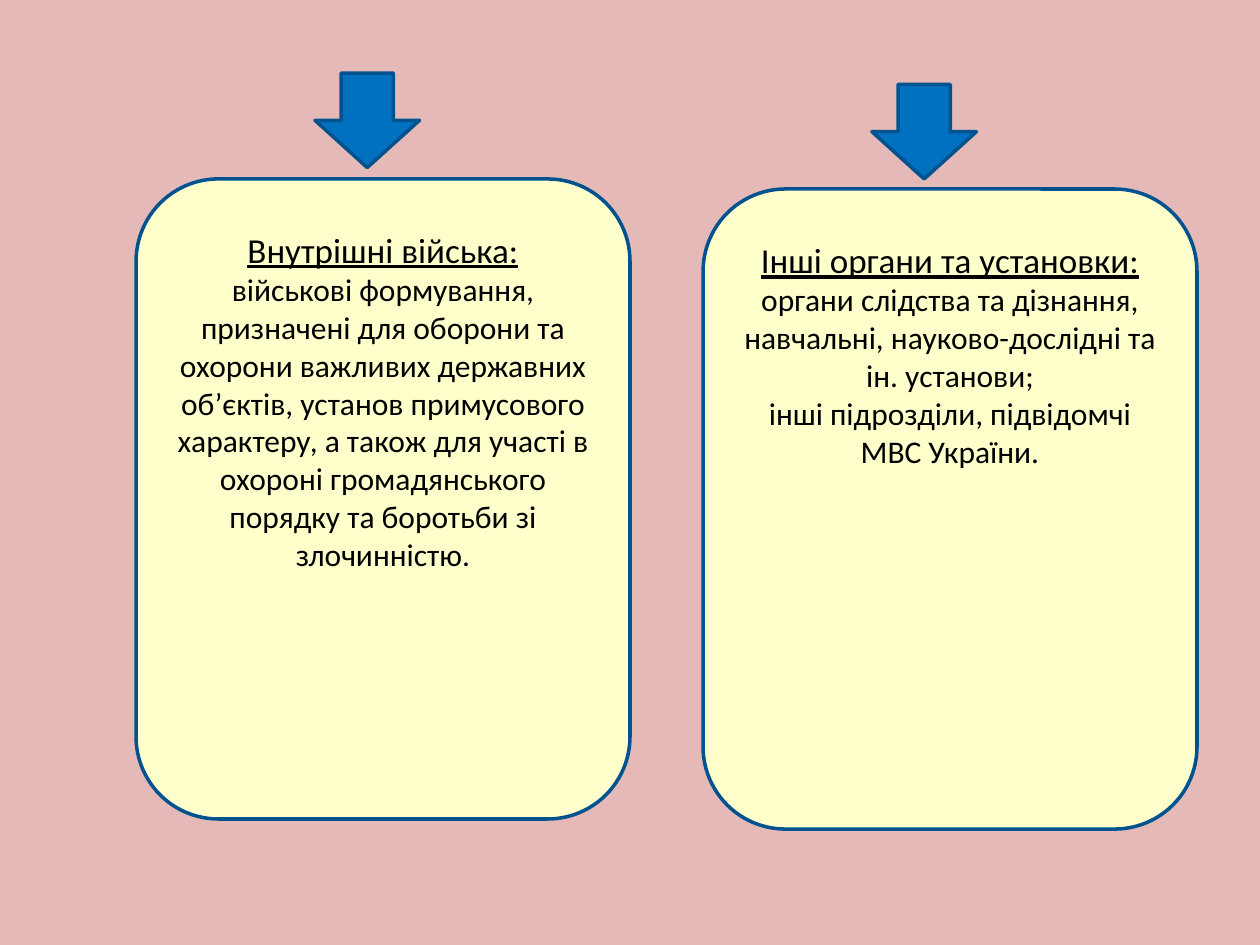
import pptx
import pptx.dml.color
import pptx.enum.shapes
import pptx.enum.text
import pptx.util
from pptx.util import Inches

SHAPES = pptx.enum.shapes.MSO_SHAPE


def colour(hex_string):
    return pptx.dml.color.RGBColor.from_string(hex_string)


def add_outlined(page, kind, left, top, width, height, fill):
    shape = page.shapes.add_shape(
        kind, Inches(left), Inches(top), Inches(width), Inches(height))
    shape.shadow.inherit = False
    shape.fill.solid()
    shape.fill.fore_color.rgb = colour(fill)
    shape.line.color.rgb = colour("00538E")
    shape.line.width = pptx.util.Pt(2)
    return shape


# left, top, heading, paragraphs
cards = [
    (5.58, 1.5, "Інші органи та установки:", [
        "органи слідства та дізнання, навчальні, науково-дослідні та ін. установи;",
        "інші підрозділи, підвідомчі МВС України.",
    ]),
    (1.08, 1.42, "Внутрішні війська:", [
        "військові формування, призначені для оборони та охорони важливих "
        "державних об’єктів, установ примусового характеру, а також для участі "
        "в охороні громадянського порядку та боротьби зі злочинністю.",
    ]),
]
arrows = [(2.5, 0.58), (6.92, 0.67)]

deck = pptx.Presentation()
deck.slide_width = Inches(10)
deck.slide_height = Inches(7.5)
page = deck.slides.add_slide(deck.slide_layouts[6])
page.background.fill.solid()
page.background.fill.fore_color.rgb = colour("E5B9B7")

for left, top, heading, details in cards:
    card = add_outlined(page, SHAPES.ROUNDED_RECTANGLE, left, top, 3.92, 5.08, "FFFFCC")
    frame = card.text_frame
    frame.word_wrap = True
    frame.vertical_anchor = pptx.enum.text.MSO_ANCHOR.TOP
    frame.margin_left = frame.margin_right = Inches(0.1)
    frame.margin_top = frame.margin_bottom = Inches(0.2)
    for index, text in enumerate([heading, *details]):
        para = frame.add_paragraph() if index else frame.paragraphs[0]
        para.alignment = pptx.enum.text.PP_ALIGN.CENTER
        span = para.add_run()
        span.text = text
        span.font.name = "Calibri"
        span.font.size = pptx.util.Pt(18 if index else 20)
        span.font.underline = index == 0
        span.font.color.rgb = colour("000000")

for left, top in arrows:
    add_outlined(page, SHAPES.DOWN_ARROW, left, top, 0.83, 0.75, "0070C0")

deck.save("out.pptx")
